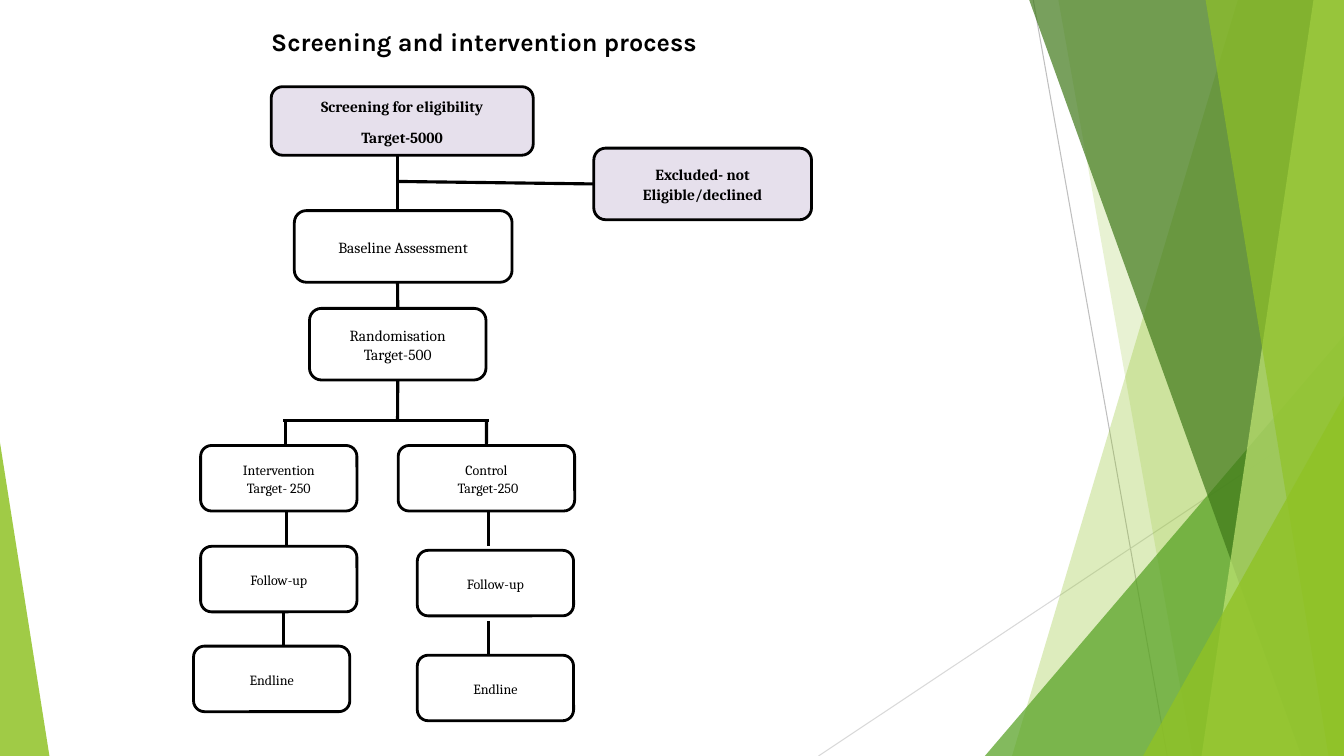
from dataclasses import dataclass

from lxml.etree import SubElement
from pptx import Presentation
from pptx.dml.color import RGBColor
from pptx.enum.shapes import MSO_CONNECTOR as Link, MSO_SHAPE as Preset
from pptx.enum.text import MSO_ANCHOR as Anchor, MSO_AUTO_SIZE as AutoSize, PP_ALIGN as Align
from pptx.oxml.ns import qn
from pptx.util import Inches, Pt


@dataclass(frozen=True)
class Theme:
    ink: str = "000000"
    lilac: str = "E6E0EC"
    lime: str = "90C226"
    pale_lime: str = "C0E474"
    green: str = "54A021"
    forest: str = "3F7819"
    grey: str = "BFBFBF"
    light_grey: str = "D9D9D9"
    heading_font: str = "Karla"
    body_font: str = "Cambria"
    heading_size: int = 18
    large: int = 11
    small: int = 10
    border: float = 2
    flow: float = 2.25
    hairline: float = 0.75


THEME = Theme()
TITLE = "Screening and intervention process"
TITLE_AREA = (19.43, 2.8, 42.75, 5.33)

# Positions are percentages of the slide's width and height.
TOP, LEFT, BOTTOM = 0, 1, 2
WIDE, MEDIUM, NARROW = (16.2, 9.47), (13.13, 9.47), (11.63, 8.67)
HIGHLIGHT = {"fill": THEME.lilac, "bold": True}
SMALL = {"size": THEME.small}
STEPS = {
    "screening": (["Screening for eligibility", "Target-5000"], (20.18, 11.47), (19.5, 9.07),
                  {**HIGHLIGHT, "after": 8}),
    "baseline": (["Baseline Assessment"], (21.9, 27.87), WIDE, {}),
    "excluded": (["Excluded- not Eligible/declined"], (44.18, 19.6), WIDE, HIGHLIGHT),
    "randomisation": (["Randomisation", "Target-500"], (23.03, 40.8), MEDIUM, {}),
    "intervention": (["Intervention", "Target- 250"], (14.93, 58.93), NARROW, SMALL),
    "control": (["Control", " Target-250"], (29.63, 58.93), (13.13, 8.67), SMALL),
    "intervention follow-up": (["Follow-up"], (14.93, 72.27), NARROW, SMALL),
    "intervention endline": (["Endline"], (14.4, 85.47), NARROW, SMALL),
    "control follow-up": (["Follow-up"], (31.05, 72.8), NARROW, SMALL),
    "control endline": (["Endline"], (31.05, 86.67), NARROW, SMALL),
}
TRUNK, FORK = 29.58, 55.6
FLOWS = [
    ((TRUNK, 20.53), (TRUNK, 27.6)),
    ((TRUNK, 37.33), ("randomisation", TOP)),
    (("randomisation", BOTTOM), (TRUNK, FORK)),
    ((21.08, FORK), (36.38, FORK)),
    ((21.23, FORK), (21.23, 58.93)),
    ((36.2, FORK), ("control", TOP)),
    ((21.3, 67.6), (21.3, 72.27)),
    ((21.08, 80.93), (21.08, 85.47)),
    ((36.38, 67.6), (36.38, 72.27)),
    ((36.38, 82.13), (36.38, 86.67)),
    (("excluded", LEFT), (TRUNK, 24)),
]

RAYS = [
    ((76.88, 0), (86.85, 100), THEME.grey),
    ((100, 53.73), (60.9, 100), THEME.light_grey),
]
FACETS = [
    ("band", 92.1, 75.3, THEME.lime, 30),
    ("band", 78.75, 88.73, THEME.lime, 20),
    ("right corner", 73.28, 44.4, THEME.green, 72),
    ("band", 76.58, 96.83, THEME.forest, 70),
    ("band", 97.73, 89.4, THEME.pale_lime, 70),
    ("band", 89.7, 98.85, THEME.lime, 65),
    ("right corner", 85.05, 52.4, THEME.lime, 80),
    ("left corner", 3.68, 58.53, THEME.lime, 85),
]

deck = Presentation()
deck.slide_width, deck.slide_height = Inches(13.33), Inches(7.5)
page = deck.slides.add_slide(deck.slide_layouts[5])
shapes = page.shapes


def across(share):
    return round(deck.slide_width * share / 100)


def down(share):
    return round(deck.slide_height * share / 100)


def area(left, top, width, height):
    return across(left), down(top), across(width), down(height)


def write_text(shape, lines, font=THEME.body_font, size=THEME.large, bold=False,
               align=Align.CENTER, anchor=Anchor.MIDDLE, spacing=1.07, after=0):
    frame = shape.text_frame
    frame.auto_size = AutoSize.NONE
    frame.word_wrap = True
    frame.vertical_anchor = anchor
    for index, line in enumerate(lines):
        para = frame.add_paragraph() if index else frame.paragraphs[0]
        para.alignment, para.line_spacing = align, spacing
        para.space_before, para.space_after = Pt(0), Pt(after)
        span = para.add_run()
        span.text = line
        span.font.name, span.font.size, span.font.bold = font, Pt(size), bold
        span.font.color.rgb = RGBColor.from_string(THEME.ink)


def draw_facet(kind, first, second, color, opacity):
    if kind == "band":
        builder = shapes.build_freeform(across(first), 0)
        builder.add_line_segments(
            [(across(x), down(y)) for x, y in ((100, 0), (100, 100), (second, 100))], close=True)
        facet = builder.convert_to_shape()
    else:
        on_right = kind == "right corner"
        left, width = (first, 100 - first) if on_right else (0, first)
        facet = shapes.add_shape(Preset.ISOSCELES_TRIANGLE,
                                 *area(left, second, width, 100 - second))
        facet.adjustments[0] = 1 if on_right else 0
    facet.shadow.inherit = False
    facet.line.fill.background()
    facet.fill.solid()
    facet.fill.fore_color.rgb = RGBColor.from_string(color)
    tint = facet.fill._xPr.find(f"{qn('a:solidFill')}/{qn('a:srgbClr')}")
    SubElement(tint, qn("a:alpha"), val=str(opacity * 1000))


def draw_step(lines, corner, extent, look):
    box = shapes.add_shape(Preset.ROUNDED_RECTANGLE, *area(*corner, *extent))
    box.shadow.inherit = False
    box.line.color.rgb = RGBColor.from_string(THEME.ink)
    box.line.width = Pt(THEME.border)
    look = dict(look)
    fill = look.pop("fill", None)
    if fill:
        box.fill.solid()
        box.fill.fore_color.rgb = RGBColor.from_string(fill)
    else:
        box.fill.background()
    write_text(box, lines, **look)
    return box


def draw_line(start, end, color, width, boxes=None):
    is_joined = [isinstance(point[0], str) for point in (start, end)]
    ends = [(0, 0) if joined else (across(point[0]), down(point[1]))
            for point, joined in zip((start, end), is_joined)]
    line = shapes.add_connector(Link.STRAIGHT, *ends[0], *ends[1])
    for point, joined, connect in zip((start, end), is_joined,
                                      (line.begin_connect, line.end_connect)):
        if joined:
            connect(boxes[point[0]], point[1])
    line.line.color.rgb = RGBColor.from_string(color)
    line.line.width = Pt(width)
    SubElement(line._element.spPr, qn("a:effectLst"))


def main():
    title = shapes.title
    title.left, title.top, title.width, title.height = area(*TITLE_AREA)
    write_text(title, [TITLE], font=THEME.heading_font, size=THEME.heading_size, bold=True,
               align=Align.LEFT, anchor=Anchor.TOP, spacing=1.0)
    for start, end, color in RAYS:
        draw_line(start, end, color, THEME.hairline)
    for facet in FACETS:
        draw_facet(*facet)
    boxes = {name: draw_step(*step) for name, step in STEPS.items()}
    for start, end in FLOWS:
        draw_line(start, end, THEME.ink, THEME.flow, boxes)
    deck.save("out.pptx")


if __name__ == "__main__":
    main()
